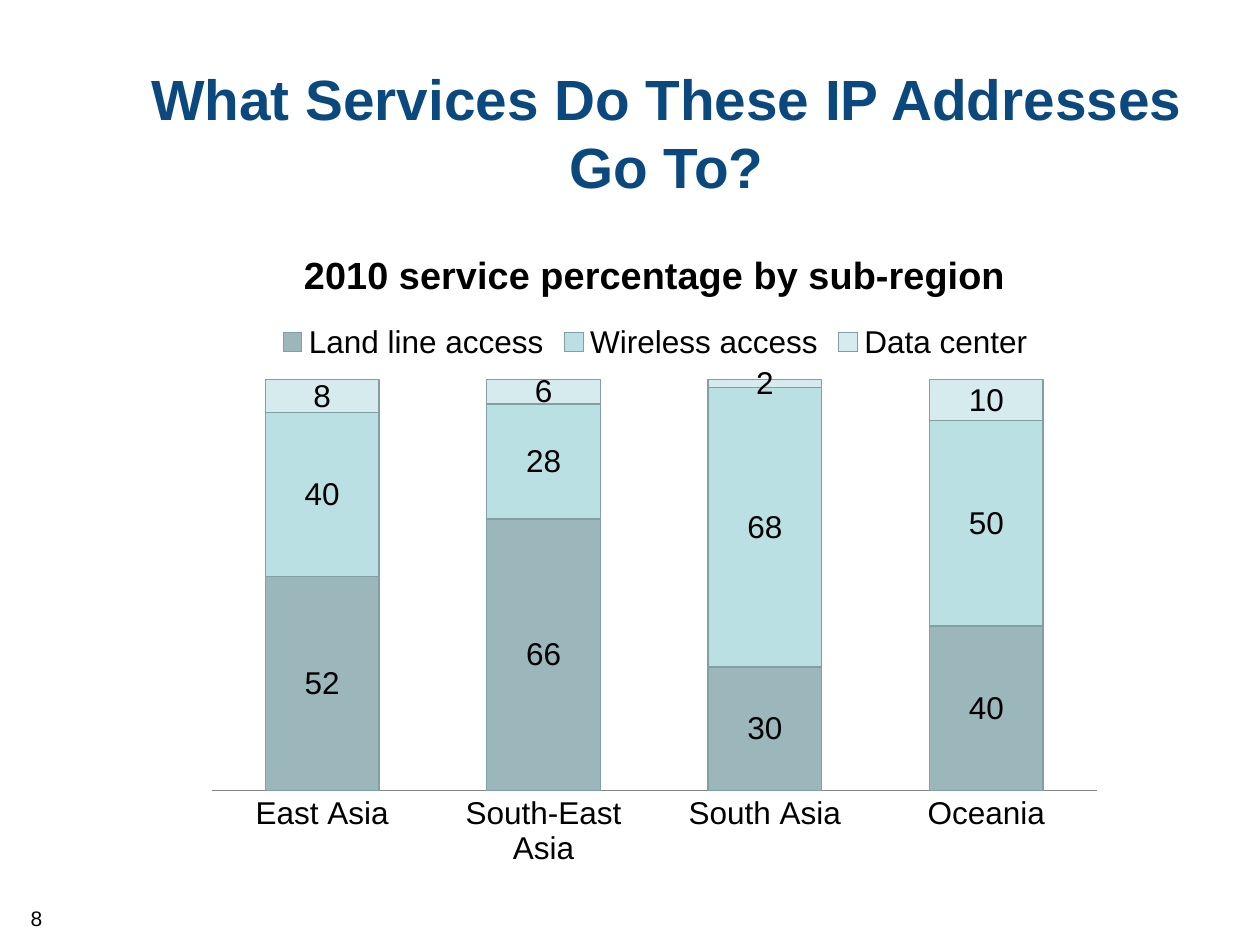
"""Build a slide with a stacked chart of services by sub-region."""
import pptx
import pptx.chart.data
import pptx.dml.color
import pptx.enum.chart
import pptx.enum.text
import pptx.oxml
import pptx.oxml.ns
import pptx.util

Inches = pptx.util.Inches
Pt = pptx.util.Pt
enum = pptx.enum.chart

HUES = {"title": "0A487D", "text": "000000", "edge": "82A0A4", "axis": "868686",
        "land": "9CB7BB", "air": "BAE0E3", "data": "D6EBED"}
FONT = "Arial"
TITLE = "What Services Do These IP Addresses Go To?"
HEAD = "2010 service percentage by sub-region"
AREAS = ["East Asia", "South-East Asia", "South Asia", "Oceania"]
ROWS = [("Land line access", "land", (52, 66, 30, 40)),
        ("Wireless access", "air", (40, 28, 68, 50)),
        ("Data center", "data", (8, 6, 2, 10))]
FRAME = (1.54, 1.78, 7.32, 5.2)
PLOT = (1.68, 3.01, 7.03, 3.26)


def rgb(name):
    return pptx.dml.color.RGBColor.from_string(HUES[name])


def style(font, size, hue="text", bold=False):
    font.name, font.size, font.bold = FONT, Pt(size), bold
    font.color.rgb = rgb(hue)


def write(slide, text, box, size, hue="text", bold=False):
    frame = slide.shapes.add_textbox(*map(Inches, box)).text_frame
    frame.word_wrap = True
    frame.vertical_anchor = pptx.enum.text.MSO_ANCHOR.MIDDLE
    para = frame.paragraphs[0]
    para.alignment = pptx.enum.text.PP_ALIGN.CENTER
    run = para.add_run()
    run.text = text
    style(run.font, size, hue, bold)


def place(chart):
    area = chart._chartSpace.chart.plotArea
    for old in area.findall(pptx.oxml.ns.qn("c:layout")):
        area.remove(old)
    left, top, wide, high = FRAME
    parts = {"x": (PLOT[0] - left) / wide, "y": (PLOT[1] - top) / high,
             "w": PLOT[2] / wide, "h": PLOT[3] / high}
    modes = '<c:layoutTarget val="inner"/><c:xMode val="edge"/><c:yMode val="edge"/>'
    sizes = "".join(f'<c:{key} val="{part:.3f}"/>' for key, part in parts.items())
    area.insert(0, pptx.oxml.parse_xml(
        f'<c:layout {pptx.oxml.ns.nsdecls("c")}><c:manualLayout>'
        f"{modes}{sizes}</c:manualLayout></c:layout>"))


def draw(slide):
    data = pptx.chart.data.CategoryChartData()
    data.categories = AREAS
    for name, _, vals in ROWS:
        data.add_series(name, vals)
    chart = slide.shapes.add_chart(
        enum.XL_CHART_TYPE.COLUMN_STACKED_100, *map(Inches, FRAME), data).chart
    style(chart.font, 18)
    chart.has_title = True
    chart.chart_title.include_in_layout = False
    chart.chart_title.text_frame.text = HEAD
    style(chart.chart_title.text_frame.paragraphs[0].runs[0].font, 21.6, bold=True)
    chart.has_legend = True
    chart.legend.position = enum.XL_LEGEND_POSITION.TOP
    chart.legend.include_in_layout = False
    style(chart.legend.font, 18)
    axis = chart.category_axis
    axis.major_tick_mark = enum.XL_TICK_MARK.NONE
    axis.format.line.color.rgb = rgb("axis")
    axis.format.line.width = Pt(0.75)
    style(axis.tick_labels.font, 18)
    scale = chart.value_axis
    scale.visible = scale.has_major_gridlines = False
    scale.minimum_scale, scale.maximum_scale = 0, 1
    plot = chart.plots[0]
    plot.gap_width, plot.overlap = 95, 100
    plot.vary_by_categories = False
    for bars, (_, hue, _) in zip(plot.series, ROWS):
        bars.format.fill.solid()
        bars.format.fill.fore_color.rgb = rgb(hue)
        bars.format.line.color.rgb = rgb("edge")
        bars.format.line.width = Pt(0.75)
        bars.data_labels.show_value = True
        bars.data_labels.position = enum.XL_LABEL_POSITION.CENTER
        style(bars.data_labels.font, 18)
    place(chart)


def main():
    deck = pptx.Presentation()
    deck.slide_width, deck.slide_height = Inches(10), Inches(7.5)
    slide = deck.slides.add_slide(deck.slide_layouts[6])
    write(slide, TITLE, (0.83, 0.42, 8.92, 1.25), 32.4, "title", True)
    write(slide, "8", (0, 7.08, 0.58, 0.42), 12)
    draw(slide)
    deck.save("out.pptx")


if __name__ == "__main__":
    main()
